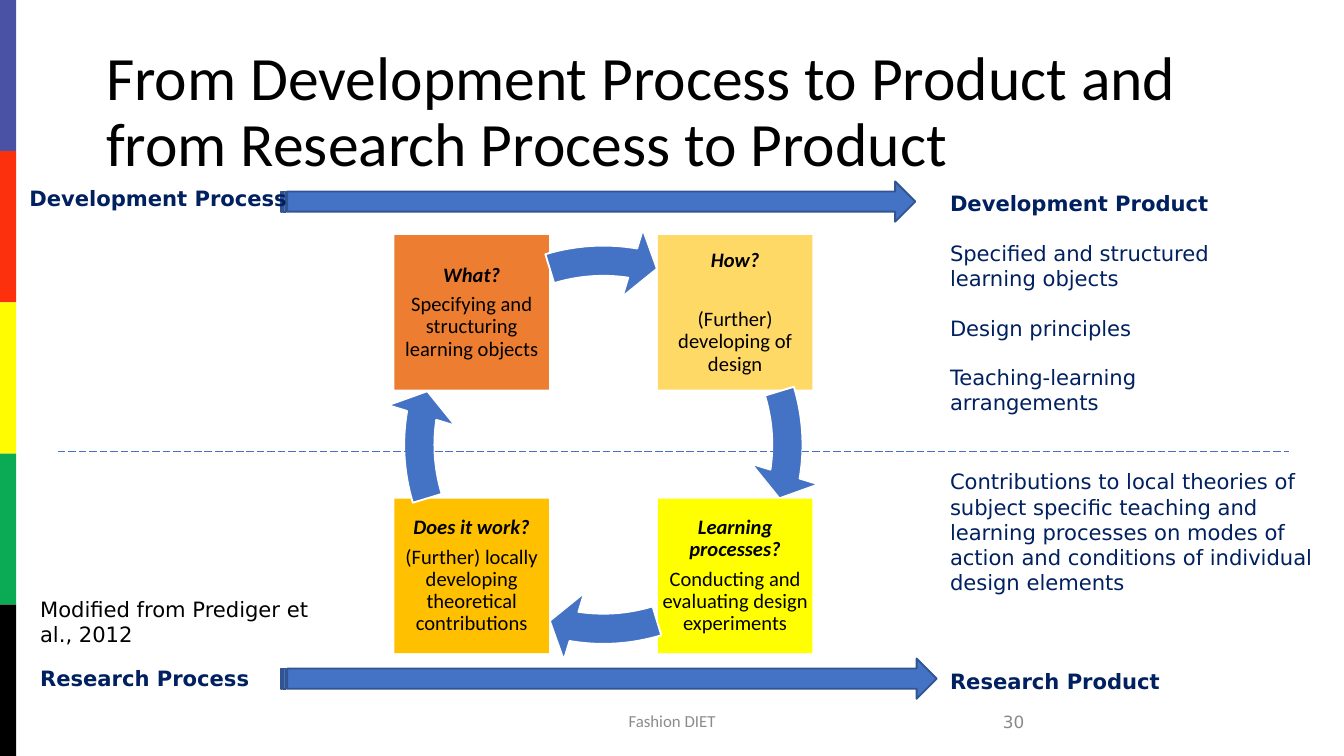
import pptx
import pptx.util
import pptx.dml.color
import pptx.enum.dml
import pptx.enum.shapes
import pptx.enum.text
import pptx.oxml.ns
from lxml import etree

COLORS = {
    "black": "000000", "white": "FFFFFF", "navy": "002060", "footer": "8C8C8C",
    "number": "898989", "blue": "4472C4", "outline": "325491",
    "orange": "ED7D31", "sand": "FFD966", "yellow": "FFFF00", "amber": "FFC000",
}
STRIPES = ["4952A4", "FC300D", "FFFB00", "0BAA54", "000000"]
SHAPE = pptx.enum.shapes.MSO_SHAPE
ALIGN = pptx.enum.text.PP_ALIGN
ANCHOR = pptx.enum.text.MSO_ANCHOR
FIT = pptx.enum.text.MSO_AUTO_SIZE
LABEL = {"name": "DejaVu Sans", "size": 11.25, "color": "navy"}
BOLD_LABEL = {**LABEL, "bold": True}
CYCLE_TEXT = {"name": "Calibri", "size": 11, "color": "black"}
CYCLE_HEADING = {**CYCLE_TEXT, "bold": True, "italic": True}
LINE_GAP = 13.1


def rgb(color):
    return pptx.dml.color.RGBColor.from_string(COLORS.get(color, color))


class SlideBuilder:
    """Draws on a grid of square cells, 100 columns to the slide's width."""

    def __init__(self, presentation):
        self.cell = presentation.slide_width / 100
        self.rows = presentation.slide_height / self.cell
        self.slide = presentation.slides.add_slide(presentation.slide_layouts[5])

    def place(self, *cells):
        return [round(value * self.cell) for value in cells]

    def fill_text(self, shape, paragraphs, align=ALIGN.LEFT, anchor=ANCHOR.TOP,
                  fit=FIT.NONE, spacing=1.0, inset=None):
        """Fill a shape with (text, font format, space after in points) entries."""
        frame = shape.text_frame
        for key, value in {"word_wrap": True, "auto_size": fit,
                           "vertical_anchor": anchor}.items():
            setattr(frame, key, value)
        if inset is not None:
            for side in ("left", "top", "right", "bottom"):
                setattr(frame, f"margin_{side}", self.place(inset)[0])
        for index, (text, style, gap) in enumerate(paragraphs):
            paragraph = frame.add_paragraph() if index else frame.paragraphs[0]
            for key, value in {"alignment": align, "line_spacing": spacing,
                               "space_after": pptx.util.Pt(gap)}.items():
                setattr(paragraph, key, value)
            run = paragraph.add_run()
            run.text = text
            for key, value in style.items():
                if key == "color":
                    run.font.color.rgb = rgb(value)
                else:
                    setattr(run.font, key, pptx.util.Pt(value) if key == "size" else value)

    def title(self, text, area, style):
        shape = self.slide.shapes.title
        for key, value in zip(("left", "top", "width", "height"), self.place(*area)):
            setattr(shape, key, value)
        self.fill_text(shape, [(text, style, 0)], anchor=ANCHOR.MIDDLE, spacing=0.9)

    def text(self, area, paragraphs, **layout):
        box = self.slide.shapes.add_textbox(*self.place(*area))
        self.fill_text(box, paragraphs, **layout)

    def shape(self, kind, area, fill, line=None, adjustments=()):
        shape = self.slide.shapes.add_shape(kind, *self.place(*area))
        shape.shadow.inherit = False
        shape.fill.solid()
        shape.fill.fore_color.rgb = rgb(fill)
        if line:
            shape.line.color.rgb = rgb(line)
            shape.line.width = pptx.util.Pt(1)
        else:
            shape.line.fill.background()
        for index, value in enumerate(adjustments):
            shape.adjustments[index] = value
        return shape

    def dashed_line(self, start, end, color):
        line = self.slide.shapes.add_connector(
            pptx.enum.shapes.MSO_CONNECTOR.STRAIGHT, *self.place(*start, *end))
        line.line.color.rgb = rgb(color)
        line.line.width = pptx.util.Pt(0.5)
        line.line.dash_style = pptx.enum.dml.MSO_LINE.LONG_DASH
        properties = line._element.spPr
        etree.SubElement(properties, pptx.oxml.ns.qn("a:effectLst"))


def draw_cycle(builder):
    """Four steps clockwise from top right, each followed by its curved arrow."""
    left, top, pitch, side = 29.35, 17.5, 19.6, 11.5
    steps = [
        (1, 0, "sand", "How?", "(Further) developing of design", 20),
        (1, 1, "yellow", "Learning processes?",
         "Conducting and evaluating design experiments", 4),
        (0, 1, "amber", "Does it work?",
         "(Further) locally developing theoretical contributions", 4),
        (0, 0, "orange", "What?", "Specifying and structuring learning objects", 4),
    ]
    quarter, full = 54, 216
    for turn, (column, row, fill, heading, body, gap) in enumerate(steps):
        area = (left + column * pitch, top + row * pitch, side, side)
        step = builder.shape(SHAPE.RECTANGLE, area, fill)
        builder.fill_text(step, [(heading, CYCLE_HEADING, gap), (body, CYCLE_TEXT, 0)],
                          align=ALIGN.CENTER, anchor=ANCHOR.MIDDLE, spacing=0.9, inset=0.2)
        angles = [(angle + turn * quarter) % full for angle in (5.504, 205.845)]
        builder.shape(SHAPE.CIRCULAR_ARROW, (28.6, 16.8, 32.6, 32.6), "blue", "white",
                      (0.069, 4.651, *angles, 0.08))


def main():
    presentation = pptx.Presentation()
    presentation.slide_width = pptx.util.Inches(10)
    presentation.slide_height = pptx.util.Inches(5.625)
    builder = SlideBuilder(presentation)

    stripe = builder.rows / len(STRIPES)
    for index, color in enumerate(STRIPES):
        builder.shape(SHAPE.RECTANGLE, (0, index * stripe, 1.2, stripe), color)

    builder.title("From Development Process to Product and from Research Process to Product",
                  (6.9, 3, 86.2, 10.9), {"name": "Calibri", "size": 33, "color": "black"})
    builder.text((33.1, 52.1, 33.8, 3),
                 [("Fashion DIET", {"name": "Calibri", "size": 9, "color": "footer"}, 0)],
                 align=ALIGN.CENTER, anchor=ANCHOR.MIDDLE)
    builder.text((54.7, 52.2, 22.5, 3),
                 [("30", {"name": "DejaVu Sans", "size": 9, "color": "number"}, 0)],
                 align=ALIGN.RIGHT, anchor=ANCHOR.MIDDLE)

    draw_cycle(builder)
    for top, width in ((49, 48.8), (13.5, 47.2)):
        builder.shape(SHAPE.STRIPED_RIGHT_ARROW, (20.9, top, width, 3), "blue", "outline")

    labels = [
        ((69.7, 13.7, 22.5, 17.7), [
            ("Development Product", BOLD_LABEL, LINE_GAP),
            ("Specified and structured", LABEL, 0),
            ("learning objects", LABEL, LINE_GAP),
            ("Design principles", LABEL, LINE_GAP),
            ("Teaching-learning arrangements", LABEL, 0)]),
        ((1.2, 13.3, 21.2, 2.9), [("Development Process", BOLD_LABEL, 0)]),
        ((2, 49, 18.9, 2.9), [("Research Process", BOLD_LABEL, 0)]),
        ((69.7, 34.4, 29.1, 17.7), [
            ("Contributions to local theories of subject specific teaching and learning "
             "processes on modes of action and conditions of individual design elements",
             LABEL, 3 * LINE_GAP),
            ("Research Product", BOLD_LABEL, 0)]),
        ((2, 43.9, 24.1, 4.7),
         [("Modified from Prediger et al., 2012", {**LABEL, "color": "black"}, 0)]),
    ]
    for area, paragraphs in labels:
        builder.text(area, paragraphs, fit=FIT.SHAPE_TO_FIT_TEXT)
    builder.dashed_line((4.3, 33.6), (95.9, 33.6), "blue")

    presentation.save("out.pptx")


if __name__ == "__main__":
    main()
